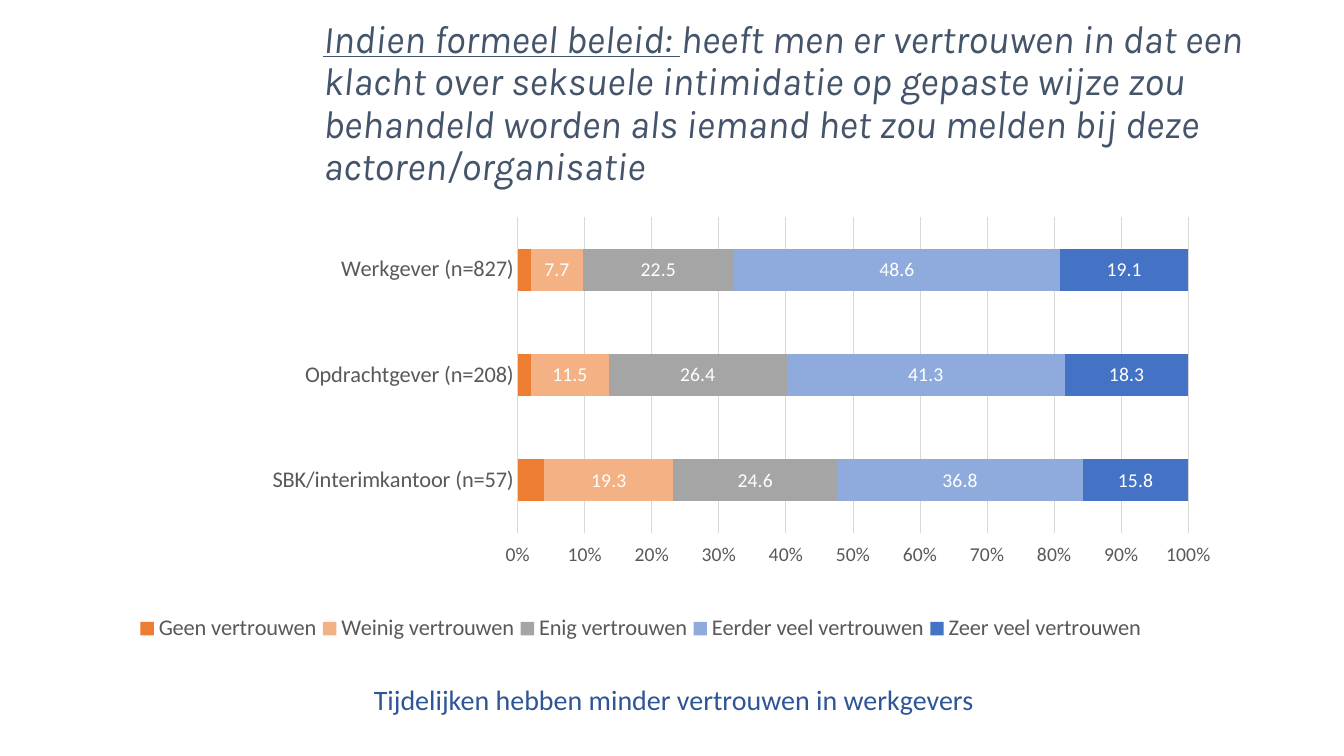
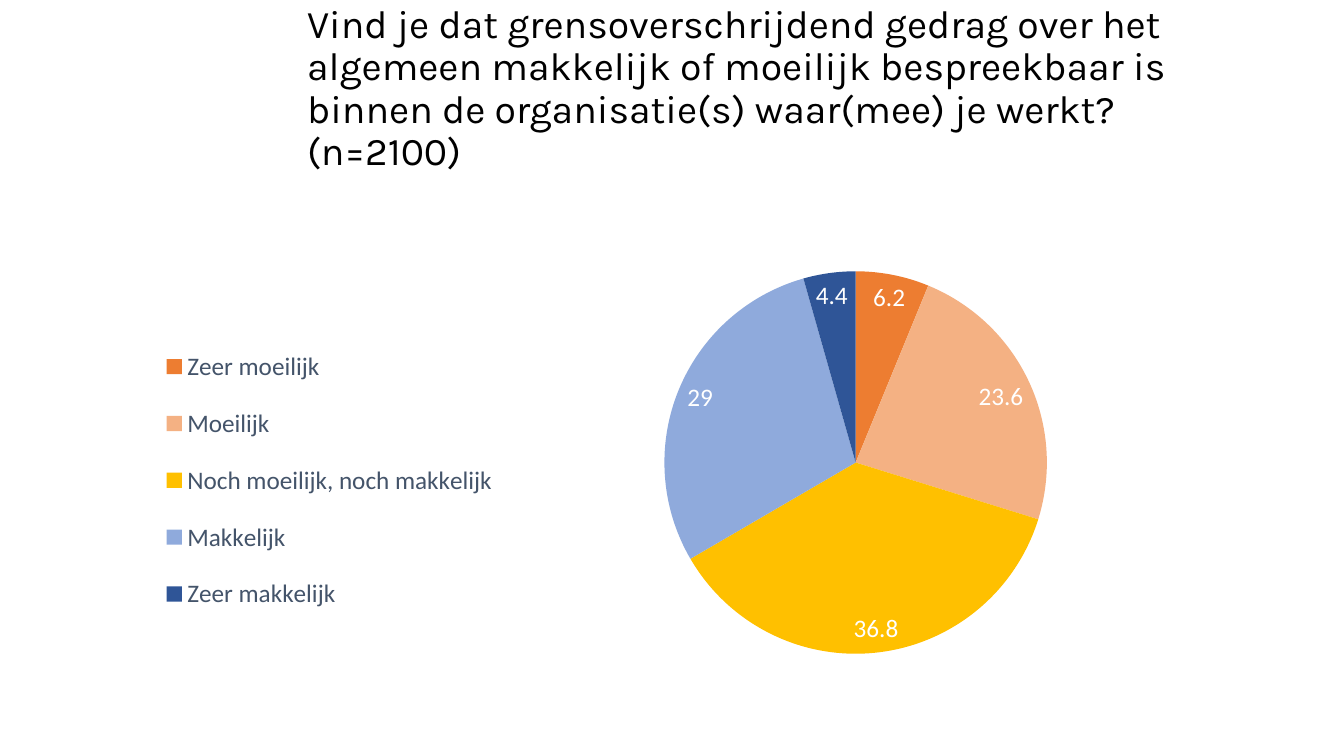
import dataclasses

import lxml.etree
import pptx
import pptx.chart.data
import pptx.dml.color
import pptx.enum.chart
import pptx.enum.text
import pptx.oxml.ns
import pptx.util


@dataclasses.dataclass(frozen=True)
class Theme:
    """Colours, fonts and type sizes shared by the slides."""

    heading_font: str = "Karla"
    body_font: str = "Calibri"
    black: str = "000000"
    white: str = "FFFFFF"
    slate: str = "44546A"
    axis_text: str = "595959"
    grid: str = "D9D9D9"
    orange: str = "ED7D31"
    peach: str = "F4B183"
    grey: str = "A5A5A5"
    yellow: str = "FFC000"
    light_blue: str = "8FAADC"
    blue: str = "4472C4"
    dark_blue: str = "2F5597"
    title_size: int = 28
    note_size: int = 20
    large_size: int = 18
    legend_size: int = 16
    label_size: int = 14


@dataclasses.dataclass(frozen=True)
class Box:
    """A rectangle in centimetres."""

    left: float
    top: float
    width: float
    height: float

    def inside(self, left, top, width, height):
        """Return a box placed relative to this one."""
        return Box(self.left + left, self.top + top, width, height)

    def lengths(self):
        """Return the four measures as lengths."""
        return [pptx.util.Cm(value) for value in dataclasses.astuple(self)]


THEME = Theme()
PAGE = Box(0, 0, 33.87, 19.05)


def rgb(colour):
    """Turn a hexadecimal string into a colour."""
    return pptx.dml.color.RGBColor.from_string(colour)


def format_font(font, size, colour, name=THEME.body_font):
    """Set the size, colour and typeface of a font."""
    font.size = pptx.util.Pt(size)
    font.color.rgb = rgb(colour)
    font.name = name


def add_text(page, box, *spans, size, colour, name=THEME.body_font, italic=False,
             anchor=pptx.enum.text.MSO_ANCHOR.TOP, indent=0):
    """Add one paragraph made of (text, underlined) spans."""
    frame = page.shapes.add_textbox(*box.lengths()).text_frame
    frame.word_wrap = True
    frame.vertical_anchor = anchor
    para = frame.paragraphs[0]
    para.line_spacing = 0.9
    if indent:
        properties = para._p.get_or_add_pPr()
        properties.set("marL", str(pptx.util.Cm(indent)))
        properties.set("indent", "0")
    for text, underlined in spans:
        span = para.add_run()
        span.text = text
        format_font(span.font, size, colour, name)
        span.font.italic = italic
        span.font.underline = underlined


def add_title(page, box, *spans, colour, italic=False):
    """Add a slide title centred vertically in its box."""
    add_text(page, box, *spans, size=THEME.title_size, colour=colour,
             name=THEME.heading_font, italic=italic,
             anchor=pptx.enum.text.MSO_ANCHOR.MIDDLE)


def set_layout(element, inner=False, **percentages):
    """Fix a plot area or legend at percentages (x, y, w, h) of its chart."""
    qn = pptx.oxml.ns.qn
    for old in element.findall(qn("c:layout")):
        element.remove(old)
    layout = lxml.etree.Element(qn("c:layout"))
    manual = lxml.etree.SubElement(layout, qn("c:manualLayout"))
    settings = [("layoutTarget", "inner")] if inner else []
    settings += [("xMode", "edge"), ("yMode", "edge")]
    settings += [(tag, value / 100) for tag, value in percentages.items()]
    for tag, value in settings:
        lxml.etree.SubElement(manual, qn(f"c:{tag}")).set("val", str(value))
    element.insert(0 if inner else 1, layout)


def add_chart(page, box, kind, categories, series, plot, size):
    """Add a chart with its data, base font and plot area."""
    data = pptx.chart.data.CategoryChartData()
    data.categories = categories
    for name, values in series:
        data.add_series(name, values)
    chart = page.shapes.add_chart(kind, *box.lengths(), data).chart
    chart.has_title = False
    format_font(chart.font, size, THEME.black)
    set_layout(chart._chartSpace.chart.plotArea, inner=True, **plot)
    return chart


def add_legend(chart, position, size, colour, **percentages):
    """Show the legend at fixed percentages of the chart."""
    chart.has_legend = True
    chart.legend.position = position
    chart.legend.include_in_layout = False
    format_font(chart.legend.font, size, colour)
    set_layout(chart.legend._element, **percentages)


def paint(part, colour):
    """Fill a series or point with a solid colour."""
    part.format.fill.solid()
    part.format.fill.fore_color.rgb = rgb(colour)


def add_labels(series, size, position):
    """Show white values on a series."""
    labels = series.data_labels
    labels.show_value = True
    labels.position = position
    format_font(labels.font, size, THEME.white)


def format_axis(axis, size):
    """Give an axis its text style and remove its tick marks."""
    axis.major_tick_mark = pptx.enum.chart.XL_TICK_MARK.NONE
    axis.minor_tick_mark = pptx.enum.chart.XL_TICK_MARK.NONE
    format_font(axis.tick_labels.font, size, THEME.axis_text)


def draw_line(line):
    """Give an axis or grid line its thin grey stroke."""
    line.color.rgb = rgb(THEME.grid)
    line.width = pptx.util.Pt(0.75)


def add_trust_chart(page, box):
    """Add the stacked bars of trust per organisation."""
    answers = [
        ("Geen vertrouwen", (2, 2, 4), THEME.orange),
        ("Weinig vertrouwen", (7.7, 11.5, 19.3), THEME.peach),
        ("Enig vertrouwen", (22.5, 26.4, 24.6), THEME.grey),
        ("Eerder veel vertrouwen", (48.6, 41.3, 36.8), THEME.light_blue),
        ("Zeer veel vertrouwen", (19.1, 18.3, 15.8), THEME.blue),
    ]
    chart = add_chart(
        page, box, pptx.enum.chart.XL_CHART_TYPE.BAR_STACKED_100,
        ["Werkgever (n=827)", "Opdrachtgever (n=208)", "SBK/interimkantoor (n=57)"],
        [(name, values) for name, values, _ in answers],
        {"x": 38.8, "y": 3.2, "w": 55.9, "h": 65.9}, THEME.label_size)
    bars = chart.plots[0]
    bars.gap_width = 150
    bars.overlap = 100
    bars.vary_by_categories = False
    for index, (series, answer) in enumerate(zip(bars.series, answers)):
        paint(series, answer[2])
        if index:
            add_labels(series, THEME.label_size,
                       pptx.enum.chart.XL_LABEL_POSITION.CENTER)
    groups, percentages = chart.category_axis, chart.value_axis
    format_axis(groups, THEME.legend_size)
    draw_line(groups.format.line)
    groups.reverse_order = True
    format_axis(percentages, THEME.label_size)
    percentages.tick_label_position = pptx.enum.chart.XL_TICK_LABEL_POSITION.HIGH
    percentages.format.line.fill.background()
    percentages.has_major_gridlines = True
    draw_line(percentages.major_gridlines.format.line)
    percentages.tick_labels.number_format = "0%"
    percentages.tick_labels.number_format_is_linked = False
    add_legend(chart, pptx.enum.chart.XL_LEGEND_POSITION.BOTTOM,
               THEME.legend_size, THEME.axis_text, x=6.8, y=84.5, w=84.5, h=9)


def add_openness_chart(page, box):
    """Add the pie of how easily the subject is discussed."""
    answers = [
        ("Zeer moeilijk", 6.2, THEME.orange),
        ("Moeilijk", 23.6, THEME.peach),
        ("Noch moeilijk, noch makkelijk", 36.8, THEME.yellow),
        ("Makkelijk", 29, THEME.light_blue),
        ("Zeer makkelijk", 4.4, THEME.dark_blue),
    ]
    names, values, colours = zip(*answers)
    chart = add_chart(page, box, pptx.enum.chart.XL_CHART_TYPE.PIE, names,
                      [("Series 1", values)],
                      {"x": 50.1, "y": 15.3, "w": 37.1, "h": 69}, THEME.large_size)
    series = chart.plots[0].series[0]
    for index, colour in enumerate(colours):
        paint(series.points[index], colour)
    add_labels(series, THEME.large_size, pptx.enum.chart.XL_LABEL_POSITION.BEST_FIT)
    add_legend(chart, pptx.enum.chart.XL_LEGEND_POSITION.RIGHT,
               THEME.large_size, THEME.slate, x=0.1, y=25, w=35, h=56)


def build_trust_slide(page, box):
    """Build the slide on trust in complaint handling."""
    add_title(page, box.inside(7.9, 0.79, 24.18, 3.68),
              ("Indien formeel beleid: ", True),
              ("heeft men er vertrouwen in dat een klacht over seksuele intimidatie "
               "op gepaste wijze zou behandeld worden als iemand het zou melden bij "
               "deze actoren/organisatie", False),
              colour=THEME.slate, italic=True)
    add_text(page, box.inside(7.9, 17.17, 19.91, 1.8),
             ("Tijdelijken hebben minder vertrouwen in werkgevers", False),
             size=THEME.note_size, colour=THEME.dark_blue, indent=1.27)
    add_trust_chart(page, box.inside(1.32, 5.08, 30.23, 12.09))


def build_openness_slide(page, box):
    """Build the slide on discussing misconduct."""
    add_title(page, box.inside(7.49, 0.41, 24.05, 3.68),
              ("Vind je dat grensoverschrijdend gedrag over het algemeen makkelijk "
               "of moeilijk bespreekbaar is binnen de organisatie(s) waar(mee) je "
               "werkt? (n=2100)", False),
              colour=THEME.black)
    add_openness_chart(page, box.inside(3.73, 4.7, 25.98, 13.97))


def main():
    """Build and save the deck."""
    deck = pptx.Presentation()
    deck.slide_width = pptx.util.Cm(PAGE.width)
    deck.slide_height = pptx.util.Cm(PAGE.height)
    for build in (build_trust_slide, build_openness_slide):
        build(deck.slides.add_slide(deck.slide_layouts[6]), PAGE)
    deck.save("out.pptx")


if __name__ == "__main__":
    main()
